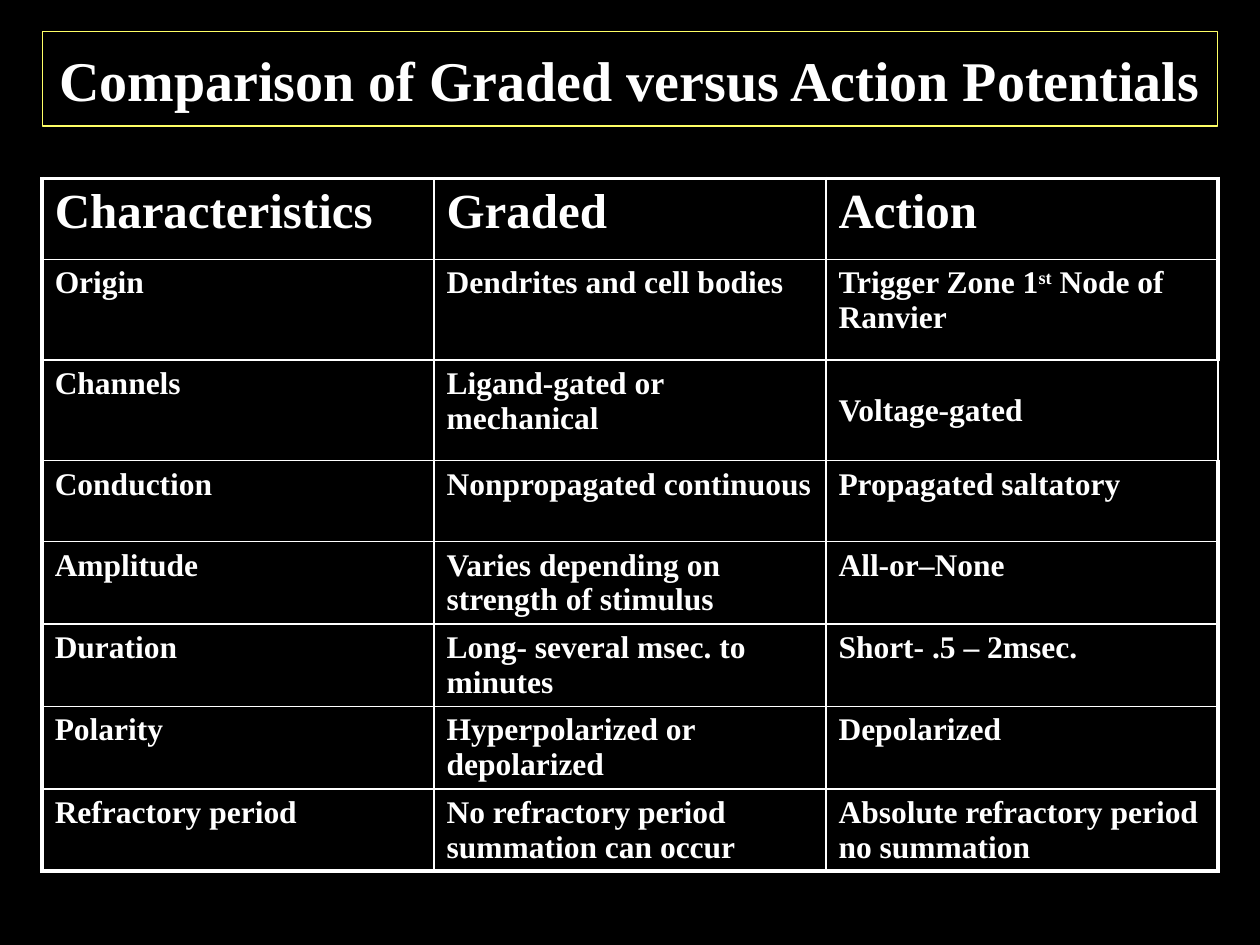
from lxml import etree
from pptx import Presentation
from pptx.dml.color import RGBColor
from pptx.enum.text import MSO_ANCHOR, MSO_AUTO_SIZE, PP_ALIGN
from pptx.oxml.ns import qn
from pptx.util import Cm, Pt

MID, TOP = MSO_ANCHOR.MIDDLE, MSO_ANCHOR.TOP
CENTER, LEFT = PP_ALIGN.CENTER, PP_ALIGN.LEFT
FIXED = MSO_AUTO_SIZE.NONE
BLACK = RGBColor(0x00, 0x00, 0x00)
WHITE = RGBColor(0xFF, 0xFF, 0xFF)
YELLOW = RGBColor(0xFF, 0xFF, 0x66)

# Content: a list in a cell holds runs, every second one raised
TITLE = "Comparison of Graded versus Action Potentials"
ROWS = [
    ("Characteristics", "Graded", "Action"),
    ("Origin", "Dendrites and cell bodies", ["Trigger Zone 1", "st", " Node of Ranvier"]),
    ("Channels", "Ligand-gated or mechanical", "Voltage-gated"),
    ("Conduction", "Nonpropagated continuous", "Propagated saltatory"),
    ("Amplitude", "Varies depending on strength of stimulus", "All-or–None"),
    ("Duration", "Long- several msec. to minutes", "Short- .5 – 2msec."),
    ("Polarity", "Hyperpolarized or depolarized", "Depolarized"),
    ("Refractory period", "No refractory period summation can occur",
     "Absolute refractory period no summation"),
]
VOLTAGE = (2, 2)  # the one cell centred in height, with a thin right edge

# Layout and format
EDGE, WIDTH = Cm(0.85), Cm(23.7)
LOW, HIGH = Cm(1.63), Cm(2.03)
HEIGHTS = [LOW, HIGH, HIGH] + [LOW] * 5
THIN, THICK = Pt(1), Pt(2.25)
FONT = {"name": "Times New Roman", "bold": True}


def write(para, text, size):
    runs = text if isinstance(text, list) else [text]
    for i, part in enumerate(runs):
        run = para.add_run()
        run.text = part
        for key, value in {**FONT, "size": size}.items():
            setattr(run.font, key, value)
        run.font.color.rgb = WHITE
        if i % 2:
            run.font._element.set("baseline", "30000")


def border(cell, sides):
    props = cell._tc.get_or_add_tcPr()
    for i, (side, width) in enumerate(sides.items()):
        line = etree.Element(qn("a:ln" + side), w=str(int(width)))
        fill = etree.SubElement(line, qn("a:solidFill"))
        etree.SubElement(fill, qn("a:srgbClr"), val=str(WHITE))
        props.insert(i, line)


deck = Presentation()
deck.slide_width, deck.slide_height = Cm(25.4), Cm(19.05)
slide = deck.slides.add_slide(deck.slide_layouts[5])
slide.background.fill.solid()
slide.background.fill.fore_color.rgb = BLACK

# Title
title = slide.shapes.title
box = {"left": EDGE, "top": Cm(0.64), "width": WIDTH, "height": Cm(1.9)}
for key, value in box.items():
    setattr(title, key, value)
title.line.color.rgb = YELLOW
title.line.width = Pt(0.75)
frame = title.text_frame
frame.auto_size = FIXED
frame.vertical_anchor = MID
frame.paragraphs[0].alignment = CENTER
write(frame.paragraphs[0], TITLE, Pt(32))

# Table
last, end = len(ROWS) - 1, len(ROWS[0]) - 1
table = slide.shapes.add_table(last + 1, end + 1, EDGE, Cm(3.6), WIDTH, sum(HEIGHTS)).table
table.first_row = table.horz_banding = False
for row, height in zip(table.rows, HEIGHTS):
    row.height = height
for r, texts in enumerate(ROWS):
    for c, text in enumerate(texts):
        cell = table.cell(r, c)
        special = (r, c) == VOLTAGE
        cell.vertical_anchor = MID if special else TOP
        cell.fill.background()
        border(cell, {
            "L": THICK if c == 0 else THIN,
            "R": THICK if c == end and not special else THIN,
            "T": THICK if r == 0 else THIN,
            "B": THICK if r == last else THIN,
        })
        para = cell.text_frame.paragraphs[0]
        para.alignment = LEFT
        write(para, text, Pt(18 if r else 28))

deck.save("out.pptx")
